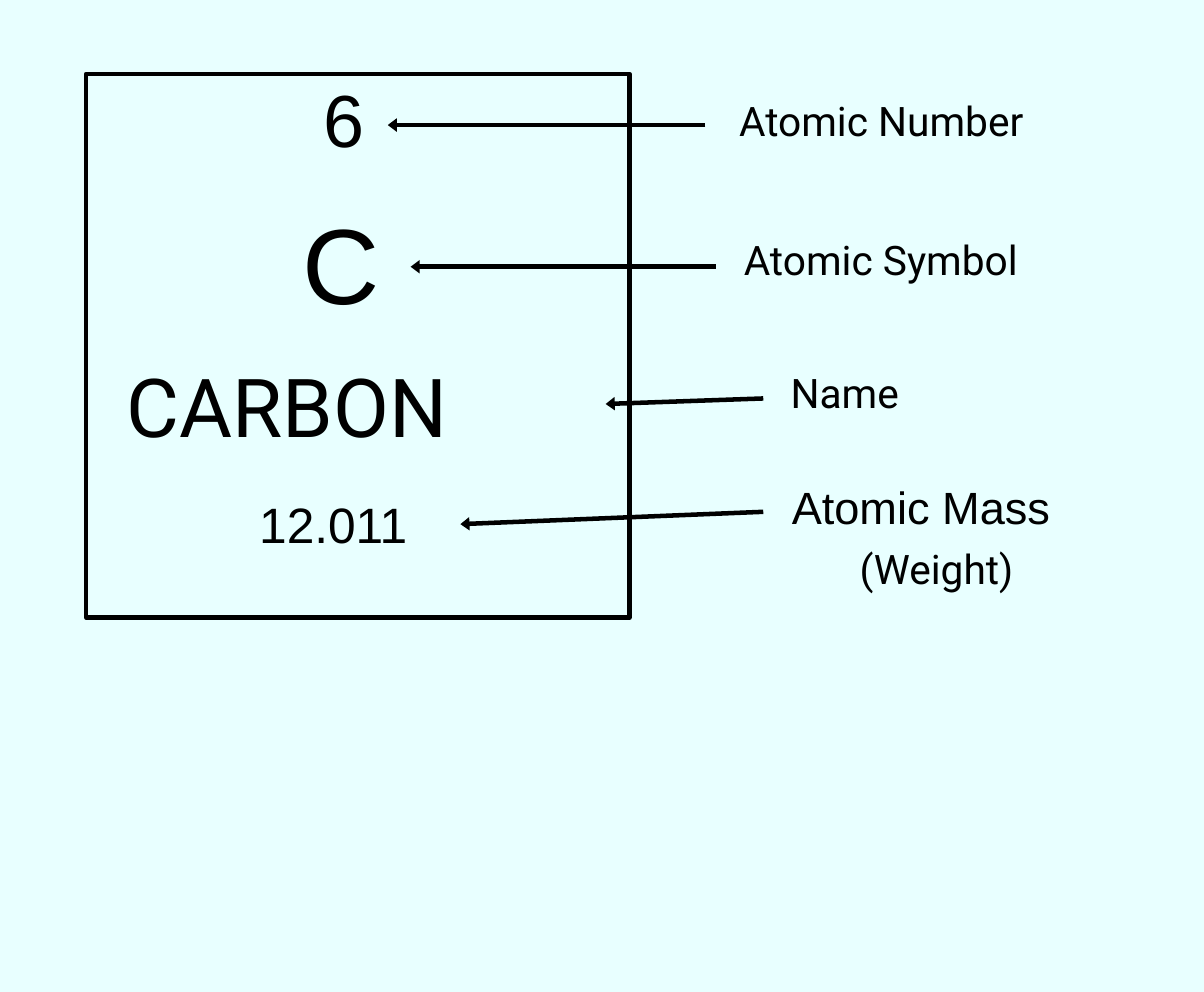
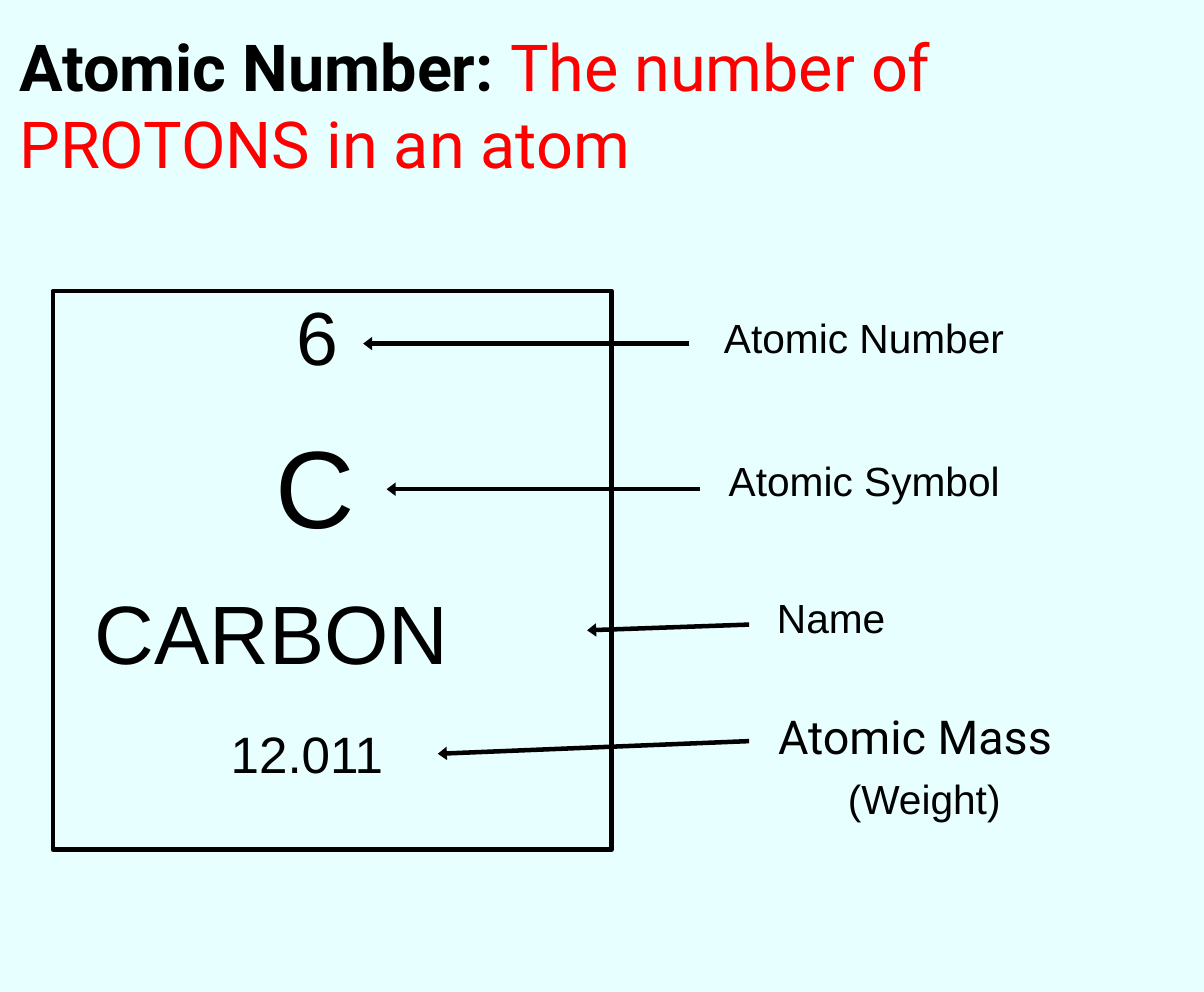
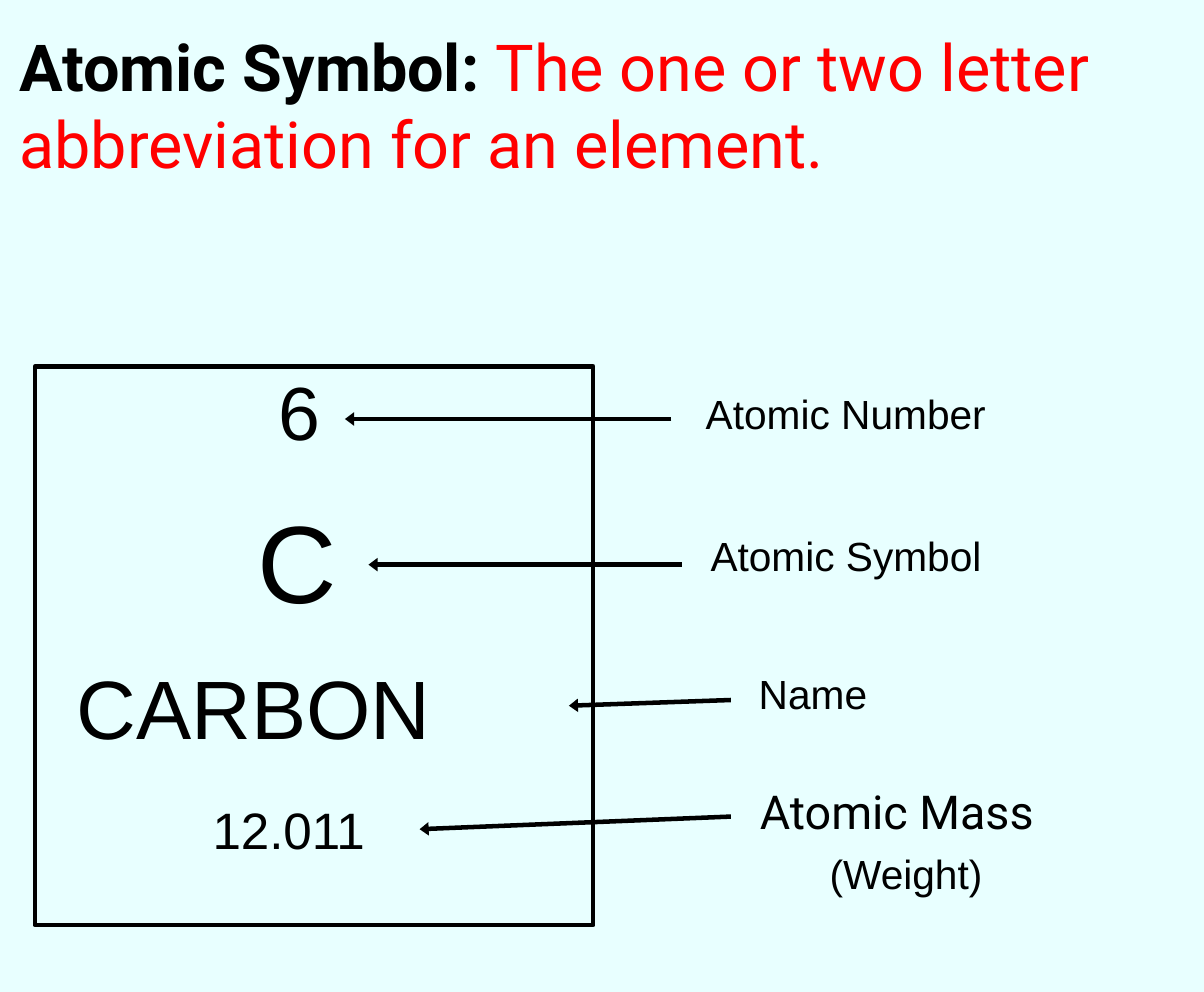
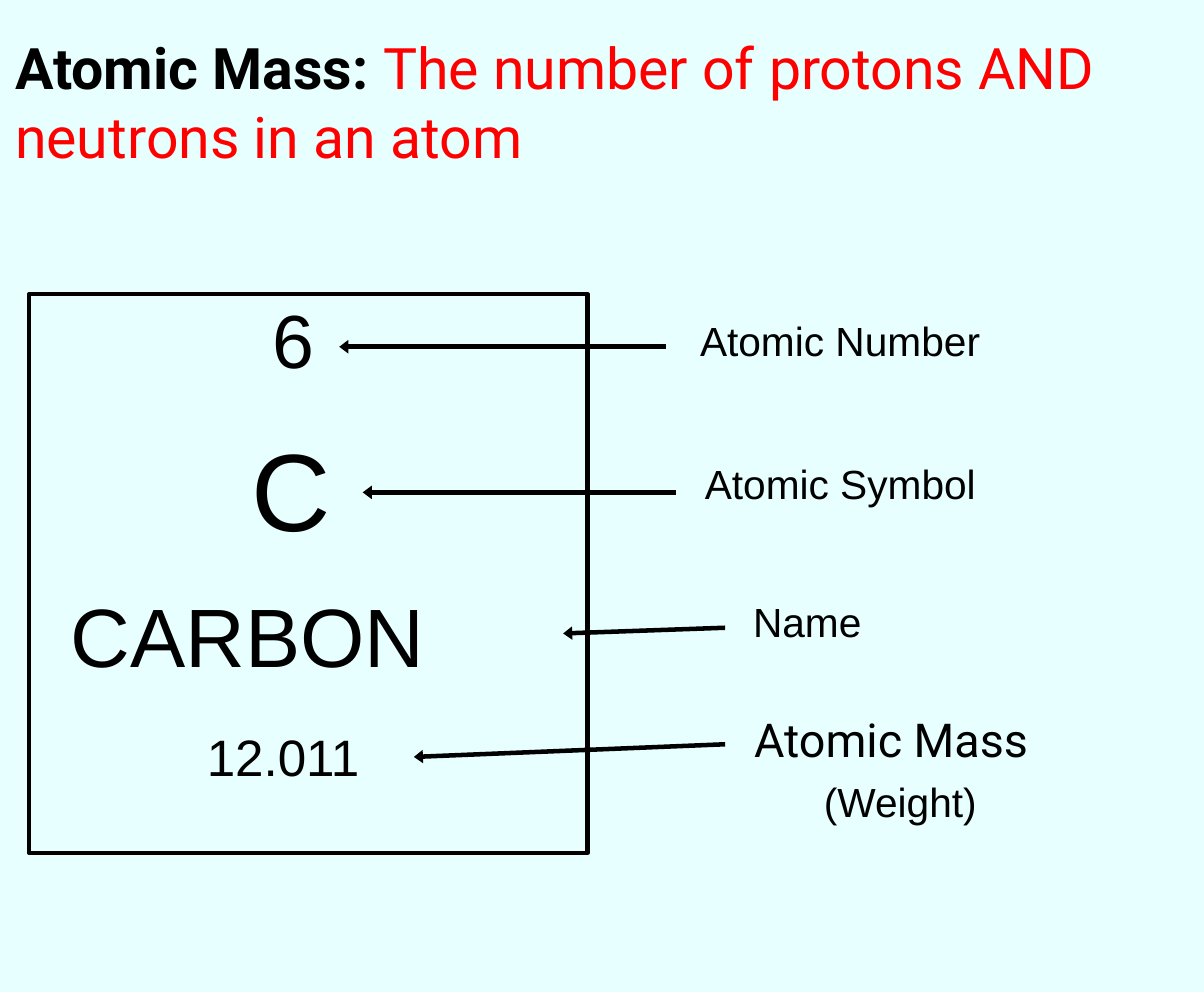
from dataclasses import dataclass

from lxml.etree import SubElement
from pptx import Presentation
from pptx.dml.color import RGBColor
from pptx.enum.shapes import MSO_CONNECTOR, MSO_SHAPE
from pptx.oxml.ns import qn
from pptx.util import Pt


@dataclass(frozen=True)
class Theme:
    background = RGBColor(0xE8, 0xFF, 0xFF)
    ink = RGBColor(0, 0, 0)
    definition = RGBColor(0xFF, 0, 0)
    sans = "Arial"
    display = "Roboto"
    number_size = 50
    symbol_size = 73
    name_size = 55
    mass_size = 34
    label_size = 27.4
    mass_label_size = 31
    line_width = 3


theme = Theme()
SPACE_BEFORE = {theme.sans: 0.12, theme.display: 0.08}  # share of the type size
TILE_SIDE = 371

# Places below are measured from the top left corner of a full-size tile.
ARROWS = [
    (422.8, 34.9, 206, 34.9),
    (429.8, 131.6, 221.6, 131.6),
    (462.4, 221.5, 354.8, 225.3),
    (462.4, 298.9, 255.6, 307.3),
]

# Tile left, top and scale; font of the name and labels; font of the mass label
DIAGRAMS = [
    (57.2, 49.1, 0.973, theme.display, theme.sans),
    (35.3, 193.3, 1, theme.sans, theme.display),
    (23.2, 243.4, 1, theme.sans, theme.display),
    (19.4, 195.4, 1, theme.sans, theme.display),
]

# Term, definition, left, top, width, height, type size
TITLES = [
    None,
    ("Atomic Number: ", "The number of PROTONS in an atom", 5.8, 13.9, 816.5, 111.6, 43),
    ("Atomic Symbol: ", "The one or two letter abbreviation for an element.",
     5.8, 13.9, 816.5, 111.6, 43),
    ("Atomic Mass: ", "The number of protons AND neutrons in an atom",
     2.9, 18, 791.3, 99.4, 38),
]


def add_text(shapes, text, *, left, top, width, height, size, font, definition=""):
    """Add black text; with a definition, the text is bold and the definition follows in red."""
    box = shapes.add_textbox(Pt(left), Pt(top), Pt(width), Pt(height))
    box.text_frame.word_wrap = True
    paragraph = box.text_frame.paragraphs[0]
    paragraph.space_before = Pt(size * SPACE_BEFORE[font])
    parts = [(text, theme.ink, bool(definition))]
    if definition:
        parts.append((definition, theme.definition, False))
    for words, color, bold in parts:
        run = paragraph.add_run()
        run.text = words
        run.font.name = font
        run.font.size = Pt(size)
        run.font.bold = bold
        run.font.color.rgb = color


def add_arrow(shapes, start_x, start_y, end_x, end_y):
    arrow = shapes.add_connector(
        MSO_CONNECTOR.STRAIGHT, Pt(start_x), Pt(start_y), Pt(end_x), Pt(end_y))
    arrow.line.color.rgb = theme.ink
    arrow.line.width = Pt(theme.line_width)
    SubElement(arrow.line._get_or_add_ln(), qn("a:tailEnd"), type="triangle", w="med", len="sm")
    SubElement(arrow._element.spPr, qn("a:effectLst"))


presentation = Presentation()
presentation.slide_width = Pt(799.92)
presentation.slide_height = Pt(658.8)

for title, (tile_left, tile_top, scale, font, mass_font) in zip(TITLES, DIAGRAMS):
    slide = presentation.slides.add_slide(presentation.slide_layouts[6])
    slide.background.fill.solid()
    slide.background.fill.fore_color.rgb = theme.background

    if title:
        term, definition, left, top, width, height, size = title
        add_text(slide.shapes, term, definition=definition, left=left, top=top,
                 width=width, height=height, size=size, font=theme.display)

    diagram = slide.shapes.add_group_shape().shapes if title else slide.shapes
    side = Pt(TILE_SIDE * scale)
    tile = diagram.add_shape(MSO_SHAPE.RECTANGLE, Pt(tile_left), Pt(tile_top), side, side)
    tile.shadow.inherit = False
    tile.fill.background()
    tile.line.color.rgb = theme.ink
    tile.line.width = Pt(theme.line_width)

    texts = [
        ("6", 154.8, -4.1, 47.5, 67.7, theme.number_size, theme.sans),
        ("C", 140.8, 81, 80.6, 95.8, theme.symbol_size, theme.sans),
        ("CARBON", 20.6, 189.2, 328.3, 74.2, theme.name_size, font),
        ("12.011", 110.9, 283, 147.6, 48.2, theme.mass_size, theme.sans),
        ("Atomic Number", 438.6, 11, 265, 40.3, theme.label_size, font),
        ("Atomic Symbol", 441.8, 105.9, 257, 40.3, theme.label_size, font),
        ("Name", 473.8, 197.1, 108.7, 40.3, theme.label_size, font),
        ("Atomic Mass", 474.6, 272.9, 256.3, 44.6, theme.mass_label_size, mass_font),
        ("(Weight)", 520.9, 316.8, 149, 40.3, theme.label_size, font),
    ]
    for text, left, top, width, height, size, text_font in texts:
        add_text(diagram, text, left=tile_left + left * scale, top=tile_top + top * scale,
                 width=width * scale, height=height * scale,
                 size=round(size * scale), font=text_font)

    for start_x, start_y, end_x, end_y in ARROWS:
        add_arrow(diagram, tile_left + start_x * scale, tile_top + start_y * scale,
                  tile_left + end_x * scale, tile_top + end_y * scale)

presentation.save("out.pptx")
